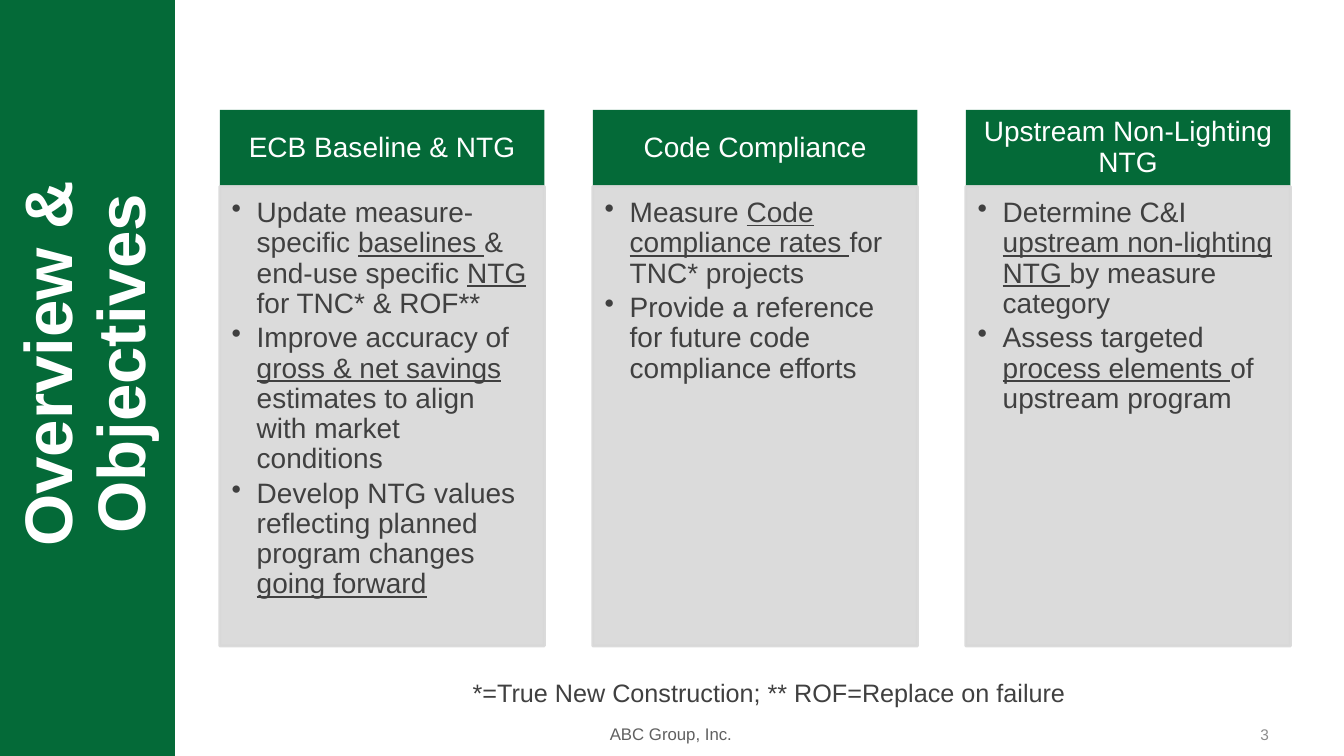
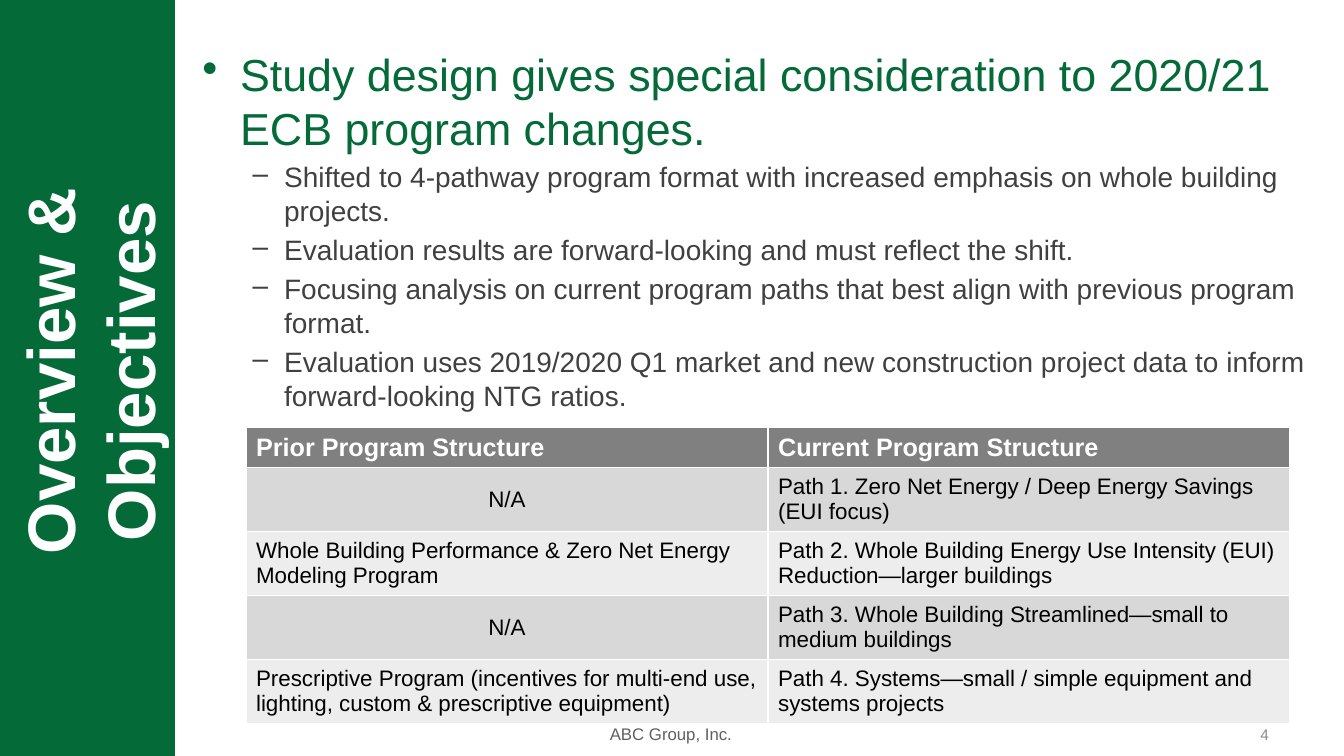
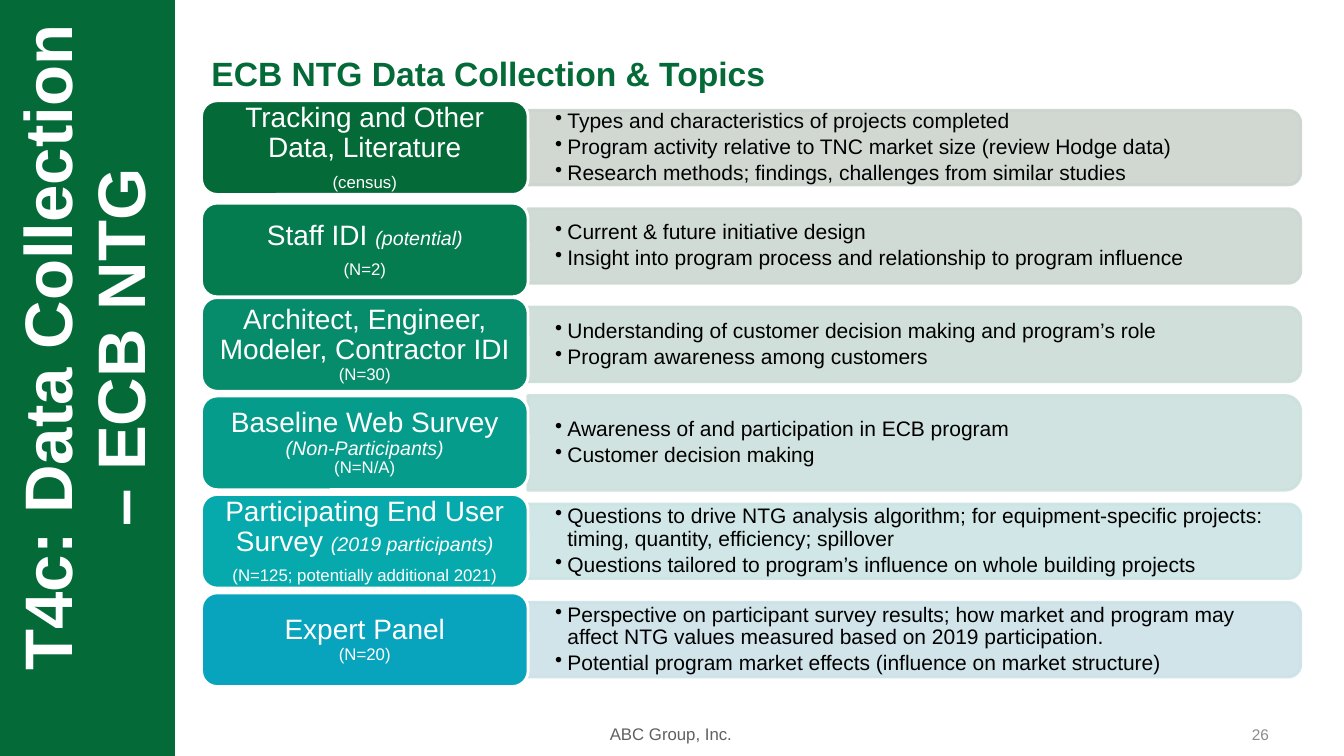
from lxml import etree
from pptx import Presentation
from pptx.dml.color import RGBColor
from pptx.enum.shapes import MSO_SHAPE
from pptx.enum.text import MSO_ANCHOR, PP_ALIGN
from pptx.oxml.ns import qn
from pptx.util import Cm, Pt

RECT = MSO_SHAPE.RECTANGLE
PILL = MSO_SHAPE.ROUNDED_RECTANGLE
TAB = MSO_SHAPE.ROUND_2_SAME_RECTANGLE
TOP, MIDDLE = MSO_ANCHOR.TOP, MSO_ANCHOR.MIDDLE
LEFT, CENTER, RIGHT = PP_ALIGN.LEFT, PP_ALIGN.CENTER, PP_ALIGN.RIGHT

GREEN = RGBColor(0x04, 0x6A, 0x38)
WHITE = RGBColor(0xFF, 0xFF, 0xFF)
BLACK = RGBColor(0, 0, 0)
DARK = RGBColor(0x40, 0x40, 0x40)
SLATE = RGBColor(0x60, 0x60, 0x60)
GREY = RGBColor(0x80, 0x80, 0x80)
PALE = RGBColor(0x8C, 0x8C, 0x8C)
SILVER = RGBColor(0xD8, 0xD8, 0xD8)
MIST = RGBColor(0xED, 0xED, 0xED)

FONT = "Arial"
WIDTH, HEIGHT = 33.87, 19.05
SIDE = 4.39
INSET = (0.25, 0.13, 0.25, 0.13)

CARDS = [
    ("ECB Baseline & NTG", [
        "Update measure-specific |baselines |& end-use specific |NTG| for TNC* & ROF**",
        "Improve accuracy of |gross & net savings |estimates to align with market conditions",
        "Develop NTG values reflecting planned program changes |going forward"]),
    ("Code Compliance", [
        "Measure |Code compliance rates |for TNC* projects",
        "Provide a reference for future code compliance efforts"]),
    ("Upstream Non-Lighting NTG", [
        "Determine C&I |upstream non-lighting NTG |by measure category",
        "Assess targeted |process elements |of upstream program"]),
]

SHIFTS = [
    "Shifted to 4-pathway program format with increased emphasis on whole building projects.",
    "Evaluation results are forward-looking and must reflect the shift.",
    "Focusing analysis on current program paths that best align with previous program format.",
    "Evaluation uses 2019/2020 Q1 market and new construction project data to inform forward-looking NTG ratios.",
]

PATHS = [
    ("Prior Program Structure", "Current Program Structure"),
    ("N/A", "Path 1. Zero Net Energy / Deep Energy Savings (EUI focus)"),
    ("Whole Building Performance & Zero Net Energy Modeling Program",
     "Path 2. Whole Building Energy Use Intensity (EUI) Reduction—larger buildings"),
    ("N/A", "Path 3. Whole Building Streamlined—small to medium buildings"),
    ("Prescriptive Program (incentives for multi-end use, lighting, custom & prescriptive equipment)",
     "Path 4. Systems—small / simple equipment and systems projects"),
]

SOURCES = [
    (GREEN, RGBColor(0xCC, 0xD4, 0xCE), "Tracking and Other Data, Literature", "(census)", 7, [
        "Types and characteristics of projects completed",
        "Program activity relative to TNC market size (review Hodge data)",
        "Research methods; findings, challenges from similar studies"]),
    (RGBColor(0x05, 0x7B, 0x50), RGBColor(0xCC, 0xD8, 0xD1), "Staff IDI |(potential)", "(N=2)", 7, [
        "Current & future initiative design",
        "Insight into program process and relationship to program influence"]),
    (RGBColor(0x06, 0x8B, 0x6B), RGBColor(0xCC, 0xDC, 0xD6),
     "Architect, Engineer, Modeler, Contractor IDI", "(N=30)", 0, [
        "Understanding of customer decision making and program’s role",
        "Program awareness among customers"]),
    (RGBColor(0x06, 0x9C, 0x8B), RGBColor(0xCC, 0xE0, 0xDD),
     "Baseline Web Survey |(Non-Participants)", "(N=N/A)", 0, [
        "Awareness of and participation in ECB program",
        "Customer decision making"]),
    (RGBColor(0x07, 0xAA, 0xAC), RGBColor(0xCC, 0xE4, 0xE4),
     "Participating End User Survey |(2019 participants)", "(N=125; potentially additional 2021)", 7, [
        "Questions to drive NTG analysis algorithm; for equipment-specific projects: timing, quantity, efficiency; spillover",
        "Questions tailored to program’s influence on whole building projects"]),
    (RGBColor(0x08, 0xA4, 0xBD), RGBColor(0xCC, 0xE2, 0xE8), "Expert Panel", "(N=20)", 0, [
        "Perspective on participant survey results; how market and program may affect NTG values measured based on 2019 participation.",
        "Potential program market effects (influence on market structure)"]),
]


def underline(font):
    font.underline = True


def aside(font):
    font.italic = True
    font.size = Pt(14)


class Deck:
    def __init__(self):
        self.show = Presentation()
        self.show.slide_width = Cm(WIDTH)
        self.show.slide_height = Cm(HEIGHT)
        self.slide = None

    def page(self, title, number, mid, size, pitch=0.9):
        self.slide = self.show.slides.add_slide(self.show.slide_layouts[6])
        self.shape(RECT, 0, 0, SIDE, HEIGHT, GREEN, GREEN, 1)
        wide, high = size
        across, down = mid
        box = self.text(across - wide / 2, down - high / 2, wide, high)
        box.rotation = 270
        self.put(box, [title], 48, WHITE, align=CENTER, bold=True, pitch=pitch)
        foot = self.text(14.41, 18.11, 5, 0.76)
        self.put(foot, ["ABC Group, Inc."], 12, SLATE, align=CENTER)
        count = self.text(24.33, 18, 7.9, 1.02, anchor=MIDDLE)
        self.put(count, [number], 11, PALE, align=RIGHT)

    def frame(self, box, anchor, pad):
        frame = box.text_frame
        frame.word_wrap = True
        frame.vertical_anchor = anchor
        (frame.margin_left, frame.margin_top,
         frame.margin_right, frame.margin_bottom) = map(Cm, pad)

    def text(self, x, y, w, h, anchor=TOP, pad=INSET):
        box = self.slide.shapes.add_textbox(Cm(x), Cm(y), Cm(w), Cm(h))
        self.frame(box, anchor, pad)
        return box

    def shape(self, kind, x, y, w, h, fill, line=None, weight=2, anchor=MIDDLE, pad=INSET):
        box = self.slide.shapes.add_shape(kind, Cm(x), Cm(y), Cm(w), Cm(h))
        box.shadow.inherit = False
        box.fill.solid()
        box.fill.fore_color.rgb = fill
        if line is None:
            box.line.fill.background()
        else:
            box.line.color.rgb = line
            box.line.width = Pt(weight)
        self.frame(box, anchor, pad)
        return box

    def fade(self, box):
        for color in box._element.spPr.iter(qn("a:srgbClr")):
            etree.SubElement(color, qn("a:alpha")).set("val", "90000")

    def put(self, box, lines, size, color, align=LEFT, bold=False, pitch=None,
            gap=0, mark=None, bullet=None, indent=(0, 0)):
        frame = box.text_frame
        for line in lines:
            first = not frame.text
            para = frame.paragraphs[0] if first else frame.add_paragraph()
            if bullet:
                left, hang = indent
                props = para._p.get_or_add_pPr()
                props.set("marL", str(Cm(left)))
                props.set("indent", str(-Cm(hang)))
                etree.SubElement(props, qn("a:buChar")).set("char", bullet)
            para.alignment = align
            if pitch:
                para.line_spacing = pitch
            if gap and not first:
                para.space_before = Pt(gap)
            for place, part in enumerate(line.split("|")):
                run = para.add_run()
                run.text = part
                font = run.font
                font.name, font.size, font.bold = FONT, Pt(size), bold
                font.color.rgb = color
                if place % 2 and mark:
                    mark(font)

    def card(self, x, head, points):
        top = self.shape(RECT, x, 2.77, 8.18, 1.92, GREEN, pad=(0.41, 0.23, 0.41, 0.23))
        self.put(top, [head], 20, WHITE, align=CENTER, pitch=0.9)
        body = self.shape(RECT, x, 4.7, 8.18, 11.58, SILVER, SILVER,
                          anchor=TOP, pad=(0.3, 0.3, 0.41, 0.43))
        self.fade(body)
        self.put(body, points, 20, DARK, pitch=0.9, gap=3, mark=underline,
                 bullet="•", indent=(0.63, 0.63))

    def table(self, x, y, wide, rows):
        grid = self.slide.shapes.add_table(
            len(rows), 2, Cm(x), Cm(y), Cm(wide), Cm(7.4)).table
        for r, row in enumerate(rows):
            head = r == 0
            grid.rows[r].height = Cm(1 if head else 1.6)
            for c, words in enumerate(row):
                cell = grid.cell(r, c)
                cell.fill.solid()
                cell.fill.fore_color.rgb = GREY if head else SILVER if r % 2 else MIST
                cell.vertical_anchor = MIDDLE
                self.put(cell, [words], 18 if head else 16, WHITE if head else BLACK,
                         align=CENTER if words == "N/A" else LEFT, bold=head)

    def source(self, mid, nudge, high, fill, tint, name, count, gap, points):
        left, wide = 13.3, 19.48
        bar = self.shape(TAB, left + (wide - high) / 2, mid - wide / 2, high, wide, tint, tint)
        bar.rotation = 90
        self.fade(bar)
        note = self.text(left, mid - high / 2, wide, high, MIDDLE, (0.69, 0.36, 0.69, 0.36))
        self.put(note, points, 15, BLACK, pitch=0.9, gap=2.25,
                 bullet="•", indent=(0.31, 0.31))
        pill = self.shape(PILL, 5.08, mid + nudge - 1.18, 8.23, 2.36, fill, WHITE,
                          pad=(0.2, 0.1, 0.2, 0.1))
        self.put(pill, [name], 20, WHITE, align=CENTER, pitch=0.9, mark=aside)
        self.put(pill, [count], 12, WHITE, align=CENTER, pitch=0.9, gap=gap)


def main():
    deck = Deck()

    deck.page("Overview & Objectives", "3", (2.22, 9.17), (14.4, 3.96))
    for place, (head, points) in enumerate(CARDS):
        deck.card(5.54 + 9.4 * place, head, points)
    key = deck.text(11.66, 16.94, 16.5, 1.02)
    deck.put(key, ["*=True New Construction; ** ROF=Replace on failure"], 18, DARK)

    deck.page("Overview & Objectives", "4", (2.26, 9.35), (18.08, 4.37), pitch=None)
    body = deck.text(4.85, 1.05, 29, 9.6)
    deck.put(body, ["Study design gives special consideration to 2020/21 ECB program changes."],
             32, GREEN, bullet="•", indent=(0.95, 0.95))
    deck.put(body, SHIFTS, 20, DARK, gap=4, bullet="–", indent=(2.06, 0.79))
    deck.table(6.2, 10.77, 26.31, PATHS)

    deck.page("T4c: Data Collection – ECB NTG", "26", (2.22, 8.76), (17.09, 3.96))
    head = deck.text(5.08, 1.2, 26.67, 1.4)
    deck.put(head, ["ECB NTG Data Collection & Topics"], 24, GREEN, bold=True)
    for place, row in enumerate(SOURCES):
        nudge = 0.1 if place == 1 else 0
        high = 2.39 if place == 3 else 1.88
        deck.source(3.72 + 2.48 * place, nudge, high, *row)

    deck.show.save("out.pptx")


if __name__ == "__main__":
    main()
